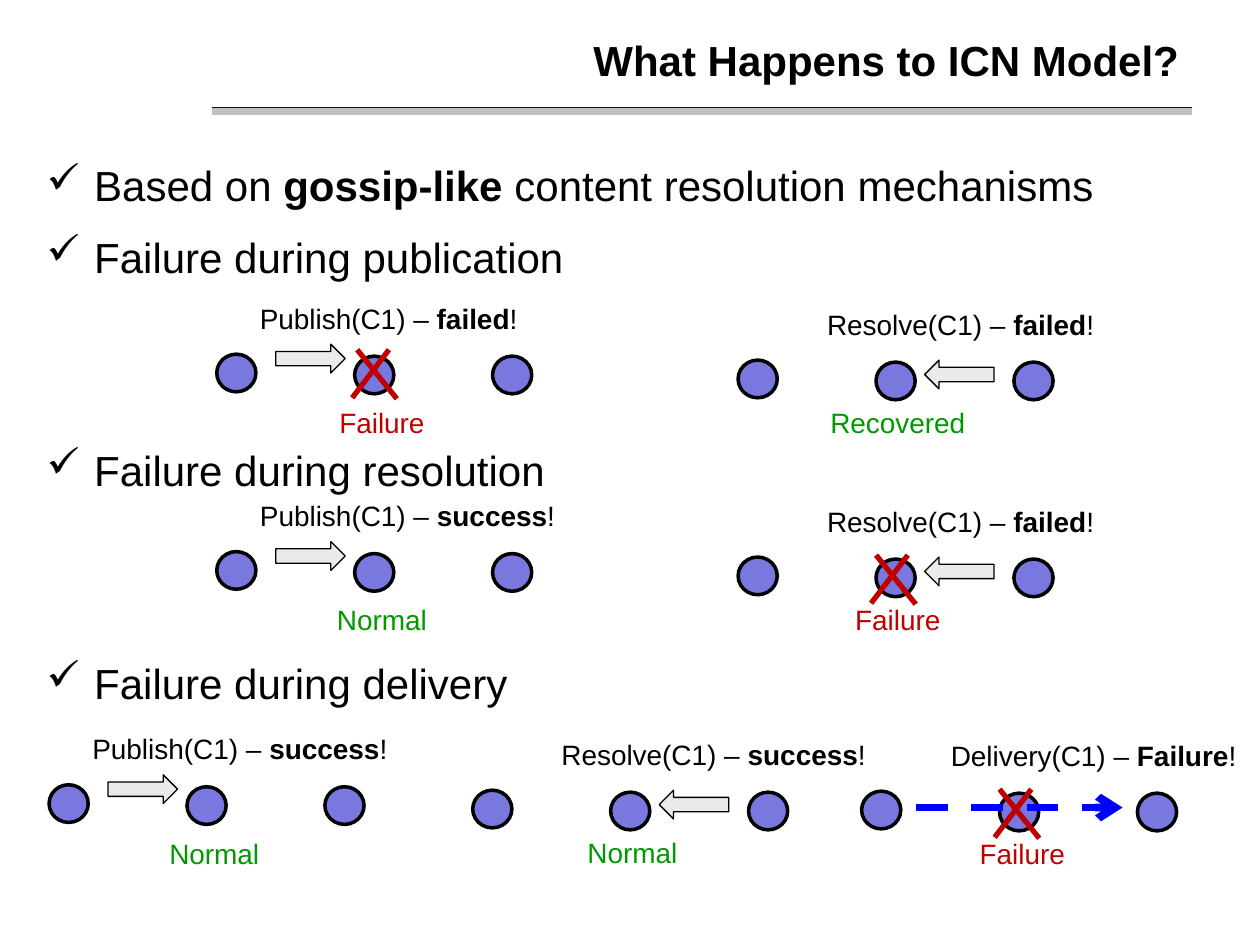
"""Build the slide on how failures affect the ICN model."""
from lxml.etree import SubElement
from pptx import Presentation
from pptx.dml.color import RGBColor
from pptx.enum.dml import MSO_LINE
from pptx.enum.shapes import MSO_CONNECTOR, MSO_SHAPE
from pptx.enum.text import MSO_ANCHOR, PP_ALIGN
from pptx.oxml.ns import qn
from pptx.util import Cm, Pt

FONT = "Arial"
COLORS = {"ink": "000000", "node": "7878DE", "arrow": "EAEAEA", "bad": "C00000",
          "good": "009900", "flow": "0000FF", "rule": "000080", "shade": "C0C0C0"}
TITLE = "What Happens to ICN Model?"
BULLETS = [
    (0, [("Based on ", False), ("gossip-like", True), (" content resolution mechanisms", False)]),
    (12, [("Failure during publication", False)]),
    (93, [("Failure during resolution", False)]),
    (93, [("Failure during delivery", False)]),
]
RULES = [(2.24, "shade", 4), (2.16, "rule", 0.5)]
STATES = {"Failure": ("bad", 2.26), "Recovered": ("good", 3.28), "Normal": ("good", 2.34)}
KINDS = {
    "Publish": {"call": 0.58, "state": (3.33, 0.91), "cross": (0.05, -0.05),
                "arrow": (MSO_SHAPE.RIGHT_ARROW, 1.19, -0.2)},
    "Resolve": {"call": 1.5, "state": (3.22, 0.79), "cross": (0, 0),
                "arrow": (MSO_SHAPE.LEFT_ARROW, 3.76, 0)},
    "Delivery": {"call": 1.5, "state": (3.24, 0.79), "cross": (0, 0)},
}
PANELS = [
    (4.37, 7.14, "Publish", "failed", 5.77, "Failure"),
    (14.88, 7.26, "Resolve", "failed", 5.97, "Recovered"),
    (4.37, 11.12, "Publish", "success", 6.53, "Normal"),
    (14.88, 11.23, "Resolve", "failed", 5.97, "Failure"),
    (0.99, 15.82, "Publish", "success", 6.53, "Normal"),
    (9.53, 15.93, "Resolve", "success", 6.71, "Normal"),
    (17.37, 15.95, "Delivery", "Failure", 6.35, "Failure"),
]
STEP, DROP = 2.78, 0.04
CROSS = [(0, -0.08, 0.8, 0.91), (-0.1, 0.89, 0.64, -0.08)]

deck = Presentation()
deck.slide_width, deck.slide_height = Cm(25.4), Cm(19.05)
slide = deck.slides.add_slide(deck.slide_layouts[6])
shapes = slide.shapes


def tint(name):
    return RGBColor.from_string(COLORS[name])


def write(par, runs, size, color="ink"):
    for text, bold in runs:
        run = par.add_run()
        run.text = text
        run.font.name, run.font.size, run.font.bold = FONT, Pt(size), bold
        run.font.color.rgb = tint(color)


def box(x, y, w, h, wrap=True):
    frame = shapes.add_textbox(Cm(x), Cm(y), Cm(w), Cm(h)).text_frame
    frame.word_wrap = wrap
    return frame


def label(x, y, w, runs, color="ink"):
    par = box(x, y, w, 0.94, False).paragraphs[0]
    par.alignment = PP_ALIGN.CENTER
    write(par, runs, 16, color)


def line(x1, y1, x2, y2, color, width):
    link = shapes.add_connector(MSO_CONNECTOR.STRAIGHT, Cm(x1), Cm(y1), Cm(x2), Cm(y2))
    link.line.color.rgb, link.line.width = tint(color), Pt(width)
    SubElement(link._element.spPr, qn("a:effectLst"))
    return link


def solid(form, x, y, w, h, color, width):
    shape = shapes.add_shape(form, Cm(x), Cm(y), Cm(w), Cm(h))
    shape.shadow.inherit = False
    shape.fill.solid()
    shape.fill.fore_color.rgb = tint(color)
    shape.line.color.rgb, shape.line.width = tint("ink"), Pt(width)


def panel(x, y, kind, result, width, state):
    rule = KINDS[kind]
    for i in range(3):
        solid(MSO_SHAPE.OVAL, x + i * STEP, y + (DROP if i else 0), 0.79, 0.76, "node", 2)
    if "arrow" in rule:
        form, dx, dy = rule["arrow"]
        solid(form, x + dx, y + dy, 1.4, 0.58, "arrow", 0.75)
    if state == "Failure":
        dx, dy = rule["cross"]
        left, top = x + STEP + dx, y + DROP + dy
        for x1, y1, x2, y2 in CROSS:
            line(left + x1, top + y1, left + x2, top + y2, "bad", 3)
    label(x + rule["call"], y - 1.19, width,
          [(f"{kind}(C1) – ", False), (result, True), ("!", False)])
    color, wide = STATES[state]
    mid, down = rule["state"]
    label(x + mid - wide / 2, y + down, wide, [(state, False)], color)
    if kind == "Delivery":
        flow = line(x + 1.1, y + 0.33, x + 5.26, y + 0.33, "flow", 4.5)
        flow.line.dash_style = MSO_LINE.DASH
        SubElement(flow.line._get_or_add_ln(), qn("a:tailEnd"), type="arrow")


for y, color, width in RULES:
    line(4.27, y, 24.03, y, color, width)

head = box(4.52, 0.61, 19.5, 1.19)
head.vertical_anchor = MSO_ANCHOR.MIDDLE
head.paragraphs[0].alignment = PP_ALIGN.RIGHT
write(head.paragraphs[0], [(TITLE, True)], 24)

body = box(0.69, 3.1, 24.1, 14.55)
for i, (gap, runs) in enumerate(BULLETS):
    par = body.add_paragraph() if i else body.paragraphs[0]
    par.space_before = Pt(gap)
    props = par._p.get_or_add_pPr()
    props.set("marL", str(Cm(0.96)))
    props.set("indent", str(-Cm(0.96)))
    SubElement(props, qn("a:buChar"), char="✓")
    write(par, runs, 24)

for item in PANELS:
    panel(*item)

deck.save("out.pptx")
